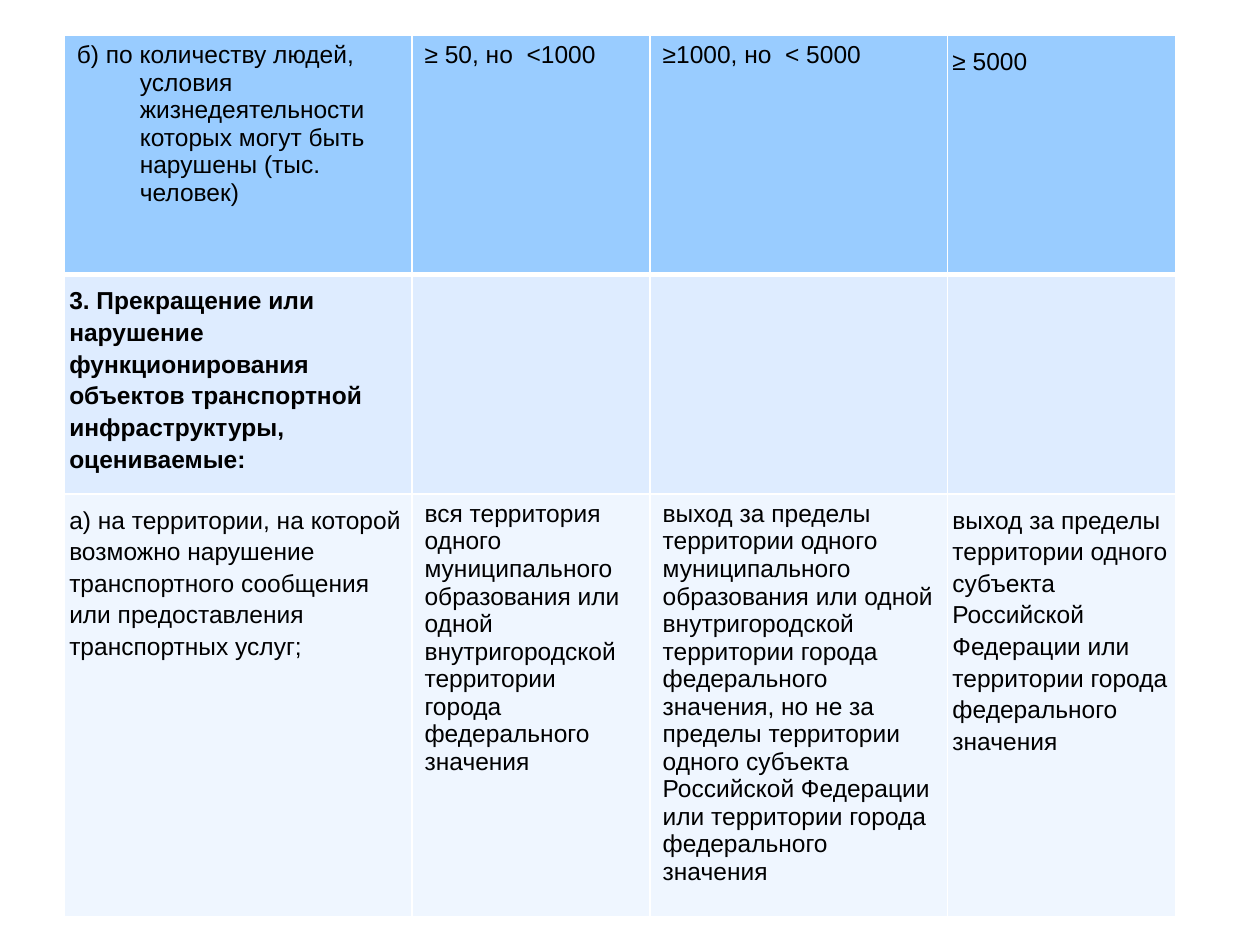
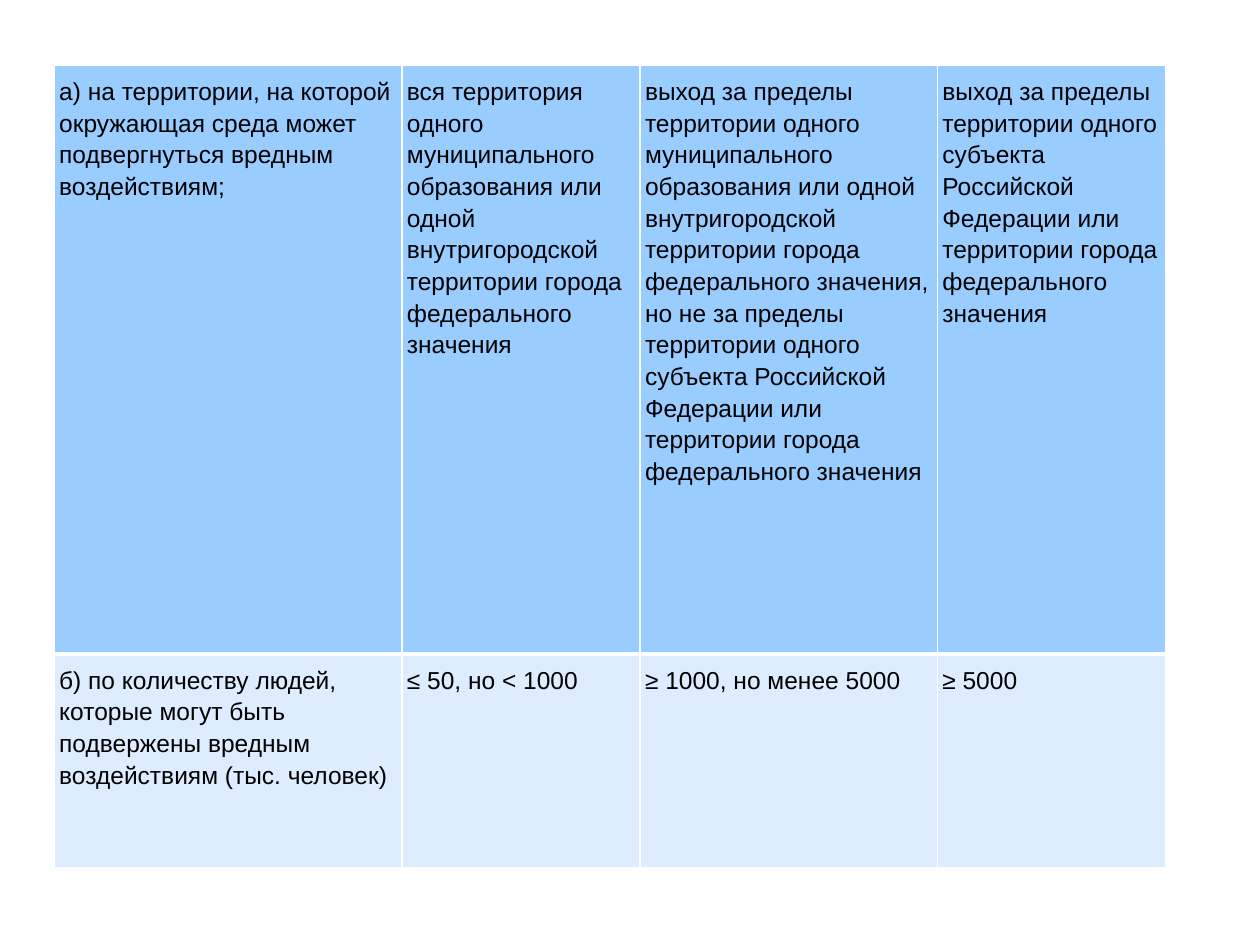
"""Build two slides of threshold tables for transport and environment."""
from dataclasses import dataclass

from lxml import etree
from pptx import Presentation
from pptx.dml.color import RGBColor
from pptx.oxml.ns import qn
from pptx.util import Inches, Pt

BLANK = 6
COLS, ROWS = 1000, 750
WIDE, HIGH = Inches(10), Inches(7.5)


@dataclass(frozen=True)
class Theme:
    """Colours, type and line weights that the slides share."""
    font: str = "Arial"
    size: int = 14
    ink: str = "000000"
    rule: str = "FFFFFF"
    fills: tuple[str, ...] = ("99CCFF", "DEECFF", "EFF6FF")
    thin: int = 1
    thick: int = 3
    lead: float = 1.15
    side: int = 4
    edge: int = 7
    hang: int = 50


@dataclass(frozen=True)
class Entry:
    """Text of one cell with its setting."""
    text: str = ""
    bold: bool = False
    plain: bool = False
    hang: bool = False


@dataclass(frozen=True)
class Grid:
    """Place, row heights and entries of one table, in grid units."""
    left: int
    top: int
    rows: tuple[int, ...]
    cells: tuple[tuple[Entry, ...], ...]


THEME = Theme()
WIDTHS = (276, 189, 236, 181)
TOWN = ("вся территория одного муниципального образования или одной "
        "внутригородской территории города федерального значения")
REGION = ("выход за пределы территории одного муниципального образования или "
          "одной внутригородской территории города федерального значения, но "
          "не за пределы территории одного субъекта Российской Федерации или "
          "территории города федерального значения")
STATE = ("выход за пределы территории одного субъекта Российской Федерации "
         "или территории города федерального значения")

TRAFFIC = Grid(51, 28, (190, 174, 336), (
    (Entry("б) по количеству людей, условия жизнедеятельности которых могут "
           "быть нарушены (тыс. человек)", plain=True, hang=True),
     Entry("≥ 50, но  <1000", plain=True),
     Entry("≥1000, но  < 5000", plain=True),
     Entry("≥ 5000")),
    (Entry("3. Прекращение или нарушение функционирования объектов "
           "транспортной инфраструктуры, оцениваемые:", bold=True),
     Entry(), Entry(), Entry()),
    (Entry("а) на территории, на которой возможно нарушение транспортного "
           "сообщения или предоставления транспортных услуг;"),
     Entry(TOWN, plain=True), Entry(REGION, plain=True), Entry(STATE)),
))
NATURE = Grid(43, 52, (467, 170), (
    (Entry("а) на территории, на которой окружающая среда может "
           "подвергнуться вредным воздействиям;"),
     Entry(TOWN), Entry(REGION), Entry(STATE)),
    (Entry("б) по количеству людей, которые могут быть подвержены вредным "
           "воздействиям (тыс. человек)"),
     Entry("≤ 50, но < 1000"), Entry("≥ 1000, но менее 5000"),
     Entry("≥ 5000")),
))


def across(units: int) -> int:
    """Turn grid columns into a length."""
    return WIDE * units // COLS


def down(units: int) -> int:
    """Turn grid rows into a length."""
    return HIGH * units // ROWS


def rule(cell, row: int) -> None:
    """Draw the cell's borders, heavy between the first two rows."""
    props = cell._tc.get_or_add_tcPr()
    heavy = {(0, "lnB"), (1, "lnT")}
    for spot, name in enumerate(("lnL", "lnR", "lnT", "lnB")):
        weight = THEME.thick if (row, name) in heavy else THEME.thin
        line = etree.Element(qn(f"a:{name}"), w=str(Pt(weight)))
        fill = etree.SubElement(line, qn("a:solidFill"))
        etree.SubElement(fill, qn("a:srgbClr"), val=THEME.rule)
        props.insert(spot, line)


def write(cell, entry: Entry) -> None:
    """Set the entry's text in the cell."""
    para = cell.text_frame.paragraphs[0]
    if not entry.plain:
        cell.margin_left = cell.margin_right = across(THEME.side)
        cell.margin_top = cell.margin_bottom = down(THEME.edge)
        para.line_spacing = THEME.lead
    if entry.hang:
        props = para._p.get_or_add_pPr()
        props.set("marL", str(across(THEME.hang)))
        props.set("indent", str(-across(THEME.hang)))
    run = para.add_run()
    run.text = entry.text
    run.font.name = THEME.font
    run.font.size = Pt(THEME.size)
    run.font.bold = entry.bold
    run.font.color.rgb = RGBColor.from_string(THEME.ink)


def draw(slide, grid: Grid) -> None:
    """Add the grid to the slide as a table."""
    table = slide.shapes.add_table(
        len(grid.rows), len(WIDTHS), across(grid.left), down(grid.top),
        across(sum(WIDTHS)), down(sum(grid.rows))).table
    for column, width in zip(table.columns, WIDTHS):
        column.width = across(width)
    for row, height in enumerate(grid.rows):
        table.rows[row].height = down(height)
        for col, entry in enumerate(grid.cells[row]):
            cell = table.cell(row, col)
            cell.fill.solid()
            cell.fill.fore_color.rgb = RGBColor.from_string(THEME.fills[row])
            rule(cell, row)
            if entry.text:
                write(cell, entry)


def main() -> None:
    """Build and save the slides."""
    deck = Presentation()
    deck.slide_width, deck.slide_height = WIDE, HIGH
    for grid in (TRAFFIC, NATURE):
        draw(deck.slides.add_slide(deck.slide_layouts[BLANK]), grid)
    deck.save("out.pptx")


if __name__ == "__main__":
    main()
